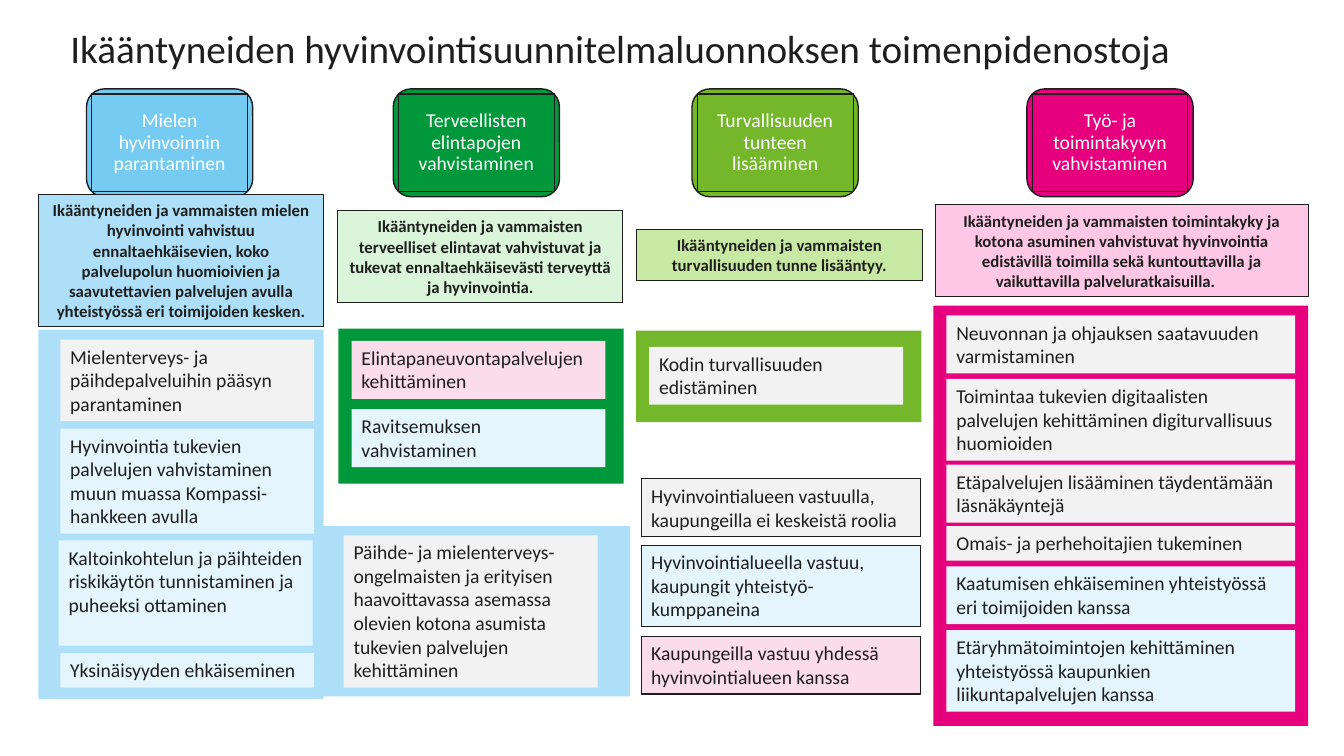
"""Build the slide of highlighted measures in the wellbeing plan for older people."""
from pptx import Presentation
from pptx.dml.color import RGBColor
from pptx.enum.shapes import MSO_SHAPE
from pptx.enum.text import MSO_ANCHOR, MSO_AUTO_SIZE, PP_ALIGN
from pptx.util import Cm, Pt

COLORS = {
    "text": "1E1E1E", "white": "FFFFFF",
    "sky": "76CBF3", "green": "00983A", "lime": "74B72B", "magenta": "E6007E",
    "pale_sky": "ADE0F8", "pale_green": "DAF5D9", "pale_lime": "C8E9A3", "pale_magenta": "FFC7E6",
    "region": "F2F2F2", "partner": "E4F5FD", "shared": "FBDCEA",
}
FONT = "Calibri"
HEADER_TOP, HEADER_WIDTH, HEADER_HEIGHT, HEADER_INSET = 2.24, 4.19, 2.72, 0.13
COLUMN_WIDTH, ACTION_WIDTH, WIDE_ACTION_WIDTH, LEGEND_WIDTH = 7.19, 6.4, 8.79, 7.04
ACTION_PADDING, ACTION_LINE = 0.27, 0.595


def format_text(text_frame, text, size=14, color="text", bold=False, align=PP_ALIGN.LEFT,
                anchor=MSO_ANCHOR.TOP, spacing=1.0, fit=MSO_AUTO_SIZE.NONE):
    """Fill a text frame with one formatted paragraph."""
    text_frame.word_wrap = True
    text_frame.auto_size = fit
    text_frame.vertical_anchor = anchor
    paragraph = text_frame.paragraphs[0]
    paragraph.alignment = align
    paragraph.line_spacing = spacing
    run = paragraph.add_run()
    run.text = text
    run.font.name = FONT
    run.font.size = Pt(size)
    run.font.bold = bold
    run.font.color.rgb = RGBColor.from_string(COLORS[color])


def add_box(left, top, width, height, fill=None, line=None, kind=MSO_SHAPE.RECTANGLE):
    """Add a flat shape measured in centimetres."""
    shape = slide.shapes.add_shape(kind, Cm(left), Cm(top), Cm(width), Cm(height))
    shape.shadow.inherit = False
    if fill:
        shape.fill.solid()
        shape.fill.fore_color.rgb = RGBColor.from_string(COLORS[fill])
    else:
        shape.fill.background()
    if line:
        shape.line.color.rgb = RGBColor.from_string(COLORS["text"])
        shape.line.width = Pt(line)
    else:
        shape.line.fill.background()
    return shape


presentation = Presentation()
presentation.slide_width = Cm(33.87)
presentation.slide_height = Cm(19.05)
slide = presentation.slides.add_slide(presentation.slide_layouts[5])

title = slide.shapes.title
title.left, title.top, title.width, title.height = Cm(1.52), Cm(0.66), Cm(28.5), Cm(1.27)
format_text(title.text_frame, "Ikääntyneiden hyvinvointisuunnitelmaluonnoksen toimenpidenostoja",
            size=28, anchor=MSO_ANCHOR.BOTTOM, spacing=0.9)

headers = [
    (2.18, "sky", "Mielen hyvinvoinnin parantaminen"),
    (9.91, "green", "Terveellisten elintapojen vahvistaminen"),
    (17.44, "lime", "Turvallisuuden tunteen lisääminen"),
    (25.88, "magenta", "Työ- ja toimintakyvyn vahvistaminen"),
]
for left, color, text in headers:
    add_box(left, HEADER_TOP, HEADER_WIDTH, HEADER_HEIGHT, color, 1, MSO_SHAPE.ROUNDED_RECTANGLE)
    label = add_box(left + HEADER_INSET, HEADER_TOP + HEADER_INSET, HEADER_WIDTH - 2 * HEADER_INSET,
                    HEADER_HEIGHT - 2 * HEADER_INSET, line=0.75)
    frame = label.text_frame
    frame.margin_left = frame.margin_right = frame.margin_top = frame.margin_bottom = Cm(0.13)
    format_text(frame, text, color="white", align=PP_ALIGN.CENTER, anchor=MSO_ANCHOR.MIDDLE, spacing=0.9)

panels = [
    (8.13, 13.26, 7.75, 4.29, "pale_sky"),
    (0.97, 8.31, COLUMN_WIDTH, 9.3, "pale_sky"),
    (8.53, 8.28, COLUMN_WIDTH, 3.91, "green"),
    (16.03, 8.33, COLUMN_WIDTH, 2.31, "lime"),
    (23.52, 7.7, 9.45, 10.59, "magenta"),
]
for panel in panels:
    add_box(*panel)

goals = [
    (0.97, 4.9, COLUMN_WIDTH, 3.33, "pale_sky",
     "Ikääntyneiden ja vammaisten mielen hyvinvointi vahvistuu ennaltaehkäisevien, koko palvelupolun "
     "huomioivien ja saavutettavien palvelujen avulla yhteistyössä eri toimijoiden kesken."),
    (8.51, 5.31, COLUMN_WIDTH, 2.31, "pale_green",
     "Ikääntyneiden ja vammaisten terveelliset elintavat vahvistuvat ja tukevat ennaltaehkäisevästi "
     "terveyttä ja hyvinvointia."),
    (16.05, 5.79, COLUMN_WIDTH, 1.27, "pale_lime",
     "Ikääntyneiden ja vammaisten turvallisuuden tunne lisääntyy."),
    (23.57, 5.16, 9.4, 2.31, "pale_magenta",
     "Ikääntyneiden ja vammaisten toimintakyky ja kotona asuminen vahvistuvat hyvinvointia edistävillä "
     "toimilla sekä kuntouttavilla ja vaikuttavilla palveluratkaisuilla.\t"),
]
for left, top, width, height, color, text in goals:
    goal = add_box(left, top, width, height, color, 0.75)
    format_text(goal.text_frame, text, size=12, bold=True, align=PP_ALIGN.CENTER,
                anchor=MSO_ANCHOR.MIDDLE, fit=MSO_AUTO_SIZE.SHAPE_TO_FIT_TEXT)

action_groups = [
    (1.52, ACTION_WIDTH, None, [
        (8.56, 3, "region", "Mielenterveys- ja päihdepalveluihin pääsyn parantaminen"),
        (10.8, 4, "partner", "Hyvinvointia tukevien palvelujen vahvistaminen muun muassa Kompassi-hankkeen avulla"),
        (16.46, 1, "partner", "Yksinäisyyden ehkäiseminen"),
    ]),
    (1.48, ACTION_WIDTH, None, [
        (13.62, 4, "partner", "Kaltoinkohtelun ja päihteiden riskikäytön tunnistaminen ja puheeksi ottaminen"),
    ]),
    (8.86, ACTION_WIDTH, None, [
        (8.59, 2, "shared", "Elintapaneuvontapalvelujen kehittäminen"),
        (10.31, 2, "partner", "Ravitsemuksen vahvistaminen"),
    ]),
    (8.66, ACTION_WIDTH, None, [
        (13.49, 6, "region", "Päihde- ja mielenterveys-ongelmaisten ja erityisen haavoittavassa asemassa olevien "
                             "kotona asumista tukevien palvelujen kehittäminen"),
    ]),
    (16.36, ACTION_WIDTH, None, [
        (8.74, 2, "region", "Kodin turvallisuuden edistäminen"),
    ]),
    (16.16, LEGEND_WIDTH, 0.75, [
        (12.07, 2, "region", "Hyvinvointialueen vastuulla, kaupungeilla ei keskeistä roolia"),
        (13.74, 3, "partner", "Hyvinvointialueella vastuu, kaupungit yhteistyö-kumppaneina"),
        (16.03, 2, "shared", "Kaupungeilla vastuu yhdessä hyvinvointialueen kanssa"),
    ]),
    (23.85, WIDE_ACTION_WIDTH, None, [
        (7.95, 2, "region", "Neuvonnan ja ohjauksen saatavuuden varmistaminen"),
        (9.55, 3, "region", "Toimintaa tukevien digitaalisten palvelujen kehittäminen digiturvallisuus huomioiden"),
        (11.71, 2, "region", "Etäpalvelujen lisääminen täydentämään läsnäkäyntejä"),
        (13.26, 1, "region", "Omais- ja perhehoitajien tukeminen"),
        (14.27, 2, "partner", "Kaatumisen ehkäiseminen yhteistyössä eri toimijoiden kanssa"),
        (15.88, 3, "partner", "Etäryhmätoimintojen kehittäminen yhteistyössä kaupunkien liikuntapalvelujen kanssa"),
    ]),
]
for left, width, line, actions in action_groups:
    for top, line_count, color, text in actions:
        action = add_box(left, top, width, ACTION_PADDING + ACTION_LINE * line_count, color, line)
        format_text(action.text_frame, text, fit=MSO_AUTO_SIZE.SHAPE_TO_FIT_TEXT)

presentation.save("out.pptx")
